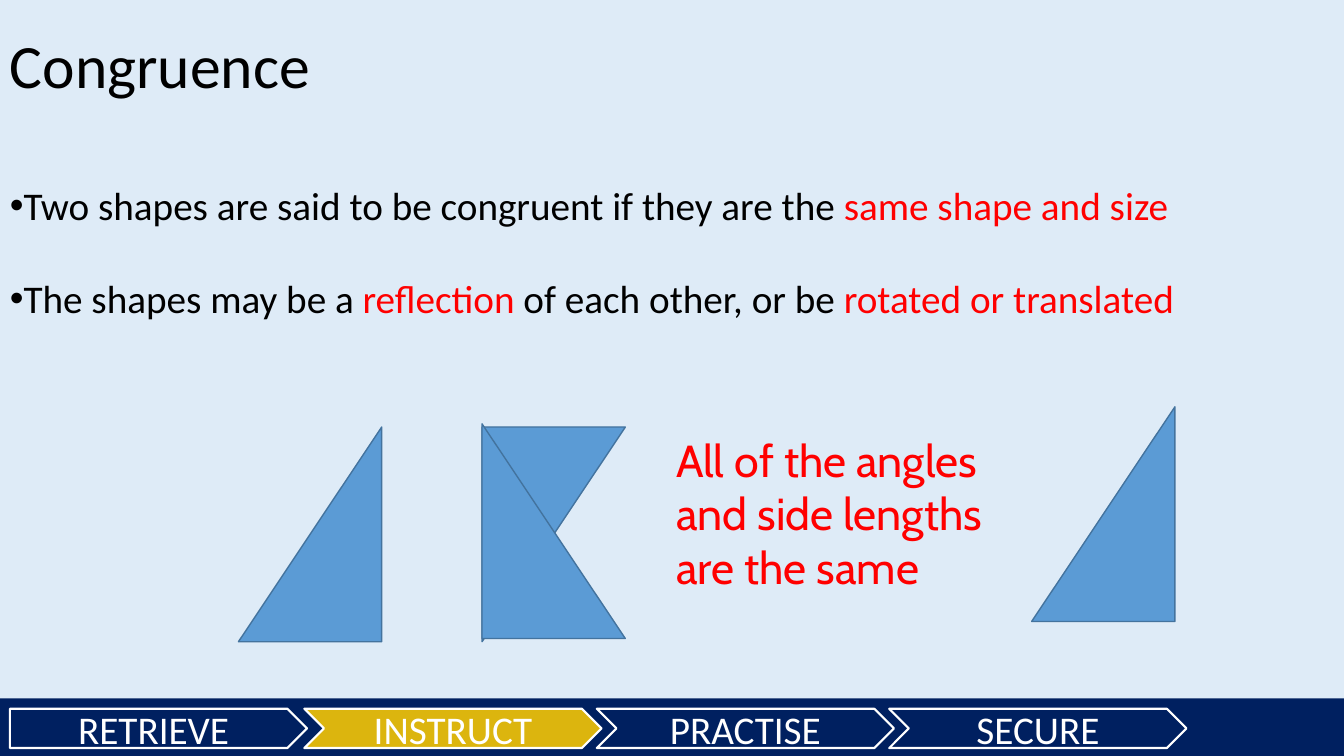
"""Builds the lesson slide on congruent shapes."""
from lxml import etree
from pptx import Presentation
from pptx.dml.color import RGBColor
from pptx.enum import shapes, text
from pptx import util as u
from pptx.oxml.ns import qn

COLOURS = {"sky": "DEEBF7", "navy": "002060", "gold": "DCB50E", "white": "FFFFFF",
           "black": "000000", "red": "FF0000", "blue": "5B9BD5", "edge": "43739E"}
WIDTH, HEIGHT = 33.87, 19.05


def colour(name):
    return RGBColor.from_string(COLOURS[name])


def write(paragraph, words, size=28, font="Calibri", ink="black"):
    run = paragraph.add_run()
    run.text = words
    run.font.size = u.Pt(size)
    run.font.name = font
    run.font.color.rgb = colour(ink)


class LessonSlide:
    def __init__(self, deck):
        self.slide = deck.slides.add_slide(deck.slide_layouts[6])
        self.slide.background.fill.solid()
        self.slide.background.fill.fore_color.rgb = colour("sky")

    def shape(self, kind, left, top, width, height, fill, edge=None, weight=1.0):
        item = self.slide.shapes.add_shape(
            kind, u.Cm(left), u.Cm(top), u.Cm(width), u.Cm(height))
        item.shadow.inherit = False
        item.fill.solid()
        item.fill.fore_color.rgb = colour(fill)
        if edge:
            item.line.color.rgb = colour(edge)
            item.line.width = u.Pt(weight)
        else:
            item.line.fill.background()
        return item

    def stage(self, kind, left, label, fill):
        arrow = self.shape(kind, left, 17.86, 7.49, 0.99, fill, "white", 1.5)
        arrow.text_frame.vertical_anchor = text.MSO_ANCHOR.MIDDLE
        paragraph = arrow.text_frame.paragraphs[0]
        paragraph.alignment = text.PP_ALIGN.CENTER
        write(paragraph, label, ink="white")

    def triangle(self, left, top, rotation, flipped=False):
        item = self.shape(shapes.MSO_SHAPE.RIGHT_TRIANGLE, left, top, 5.41, 3.61,
                          "blue", "edge")
        item.rotation = rotation
        if flipped:
            item._element.spPr.get_or_add_xfrm().set("flipH", "1")

    def textbox(self, left, top, width, height):
        frame = self.slide.shapes.add_textbox(
            u.Cm(left), u.Cm(top), u.Cm(width), u.Cm(height)).text_frame
        frame.word_wrap = True
        return frame

    def title(self, words):
        paragraph = self.textbox(0, 0.76, 30.48, 3.18).paragraphs[0]
        paragraph.line_spacing = 0.9
        write(paragraph, words, size=44)

    def bullets(self, points):
        frame = self.textbox(0, 4.45, 30.48, 12.57)
        frame.margin_top = u.Cm(0.25)
        for index, point in enumerate(points):
            paragraph = frame.add_paragraph() if index else frame.paragraphs[0]
            properties = paragraph._p.get_or_add_pPr()
            properties.set("marL", "0")
            properties.set("indent", "0")
            etree.SubElement(properties, qn("a:buFont")).set("typeface", "Arial")
            etree.SubElement(properties, qn("a:buChar")).set("char", "•")
            paragraph.line_spacing = 0.9
            if index:
                paragraph.space_before = u.Pt(36)
            for words, ink in point:
                write(paragraph, words, ink=ink)

    def remark(self, words):
        frame = self.textbox(16.79, 10.77, 9.19, 4.37)
        write(frame.paragraphs[0], words, size=32, font="Cabin", ink="red")


def main():
    deck = Presentation()
    deck.slide_width, deck.slide_height = u.Cm(WIDTH), u.Cm(HEIGHT)
    lesson = LessonSlide(deck)

    lesson.shape(shapes.MSO_SHAPE.RECTANGLE, 0, 17.6, WIDTH, 1.45, "navy")
    lesson.stage(shapes.MSO_SHAPE.PENTAGON, 0.25, "RETRIEVE", "navy")
    later_stages = [("INSTRUCT", "gold"), ("PRACTISE", "navy"), ("SECURE", "navy")]
    for index, (label, fill) in enumerate(later_stages):
        lesson.stage(shapes.MSO_SHAPE.CHEVRON, 7.67 + 7.37 * index, label, fill)

    lesson.title("Congruence")
    lesson.bullets([
        [("Two shapes are said to be congruent if they are the ", "black"),
         ("same shape and size", "red")],
        [("The shapes may be a ", "black"), ("reflection", "red"),
         (" of each other, or be ", "black"), ("rotated or translated", "red")],
    ])

    lesson.triangle(5.11, 11.66, 270)
    lesson.triangle(11.25, 11.66, 90)
    lesson.triangle(11.25, 11.58, 90, flipped=True)
    lesson.triangle(25.1, 11.15, 270)
    lesson.remark("All of the angles and side lengths are the same")

    deck.save("out.pptx")


if __name__ == "__main__":
    main()
